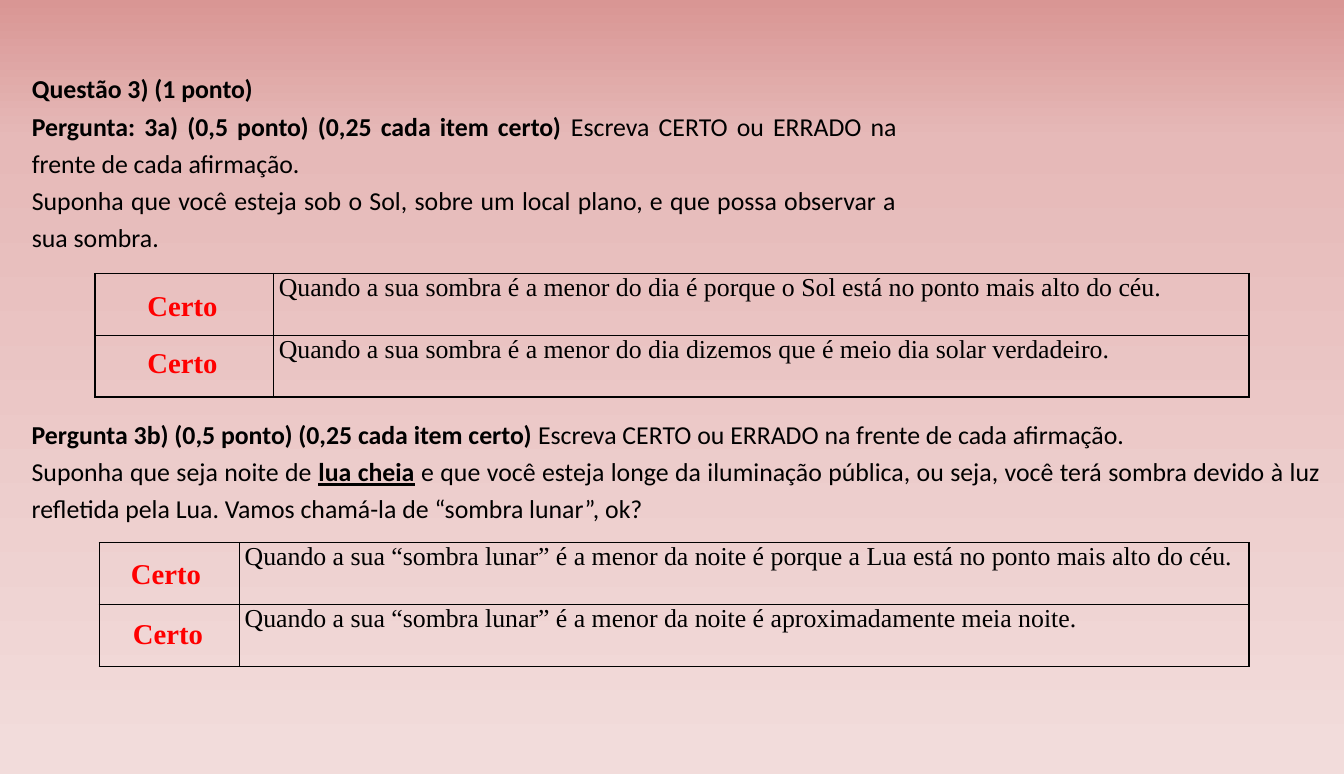
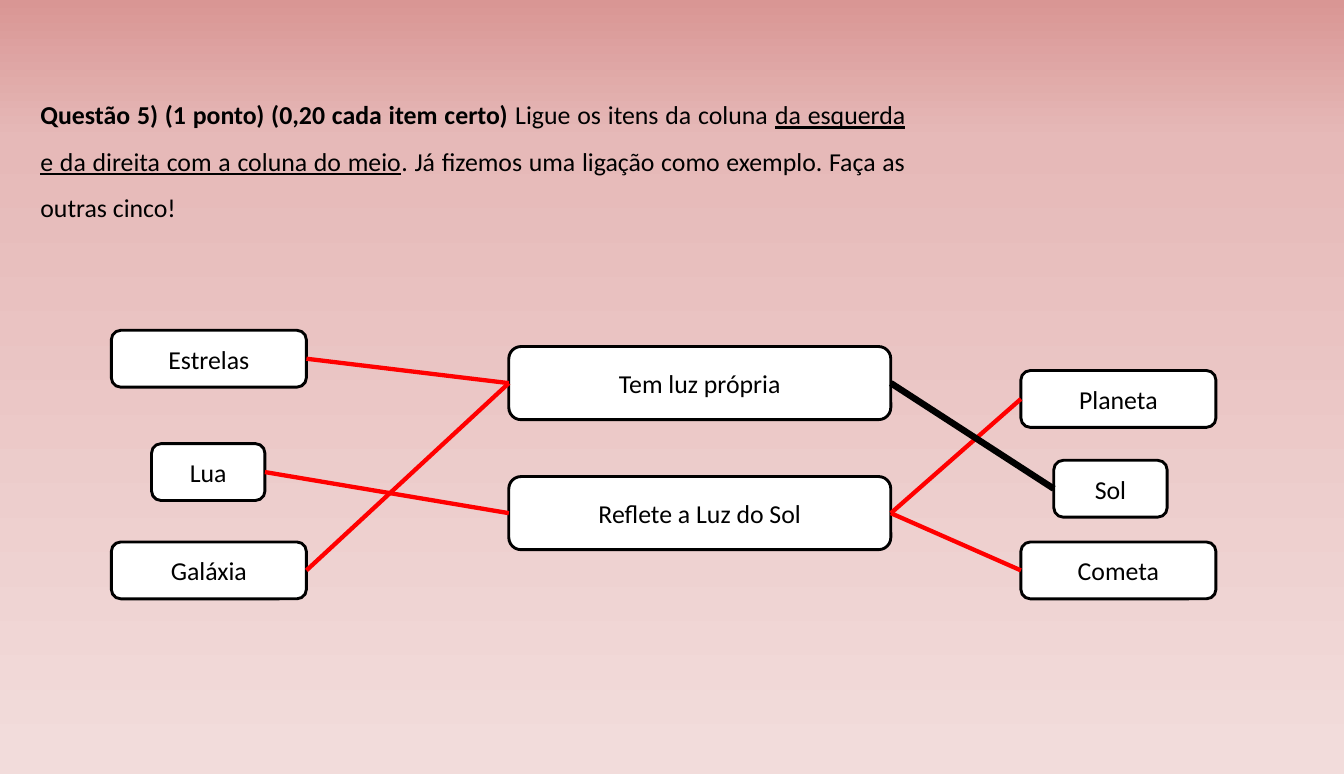
import copy

import pptx
import pptx.dml.color
import pptx.enum.shapes
import pptx.enum.text
import pptx.oxml
import pptx.oxml.ns
import pptx.util
from pptx.util import Cm

ALIGN = pptx.enum.text.PP_ALIGN
ANCHOR = pptx.enum.text.MSO_ANCHOR
LEFT_SITE, RIGHT_SITE = 1, 3


def color(value):
    return pptx.dml.color.RGBColor.from_string(value)


class Deck:
    BLACK, RED, WHITE = "000000", "FF0000", "FFFFFF"
    GRADIENT = [(0, "D99694"), (0.18, "E6B9B8"), (0.98, "F2DCDB")]
    BODY, SERIF = "Calibri", "Times New Roman"
    SIZE, ANSWER_SIZE = 18, 20

    def __init__(self):
        self.prs = pptx.Presentation()
        self.prs.slide_width, self.prs.slide_height = Cm(33.07), Cm(19.05)
        self.s = None
        self.paint_background()

    def paint_background(self):
        master = self.prs.slide_master
        fill = master.background.fill
        fill.gradient()
        fill.gradient_angle = 270
        stops = master.element.find(".//" + pptx.oxml.ns.qn("a:gsLst"))
        while len(stops) < len(self.GRADIENT):
            stops.append(copy.deepcopy(stops[-1]))
        for stop, (position, value) in zip(fill.gradient_stops, self.GRADIENT):
            stop.position = position
            stop.color.rgb = color(value)

    def new_slide(self):
        self.s = self.prs.slides.add_slide(self.prs.slide_layouts[5])

    def add_text(self, tf, paragraphs, align=ALIGN.JUSTIFY, spacing=None,
                 font=BODY, size=SIZE, ink=BLACK):
        """Each paragraph is a list of (text, style); style holds b and/or u."""
        for i, runs in enumerate(paragraphs):
            p = tf.paragraphs[0] if i == 0 else tf.add_paragraph()
            p.alignment = align
            if spacing:
                p.line_spacing = spacing
            for text, style in runs:
                r = p.add_run()
                r.text = text
                r.font.name, r.font.size = font, pptx.util.Pt(size)
                r.font.color.rgb = color(ink)
                r.font.bold, r.font.underline = "b" in style, "u" in style

    def fill_box(self, sp, paragraphs, wrap=True, **style):
        tf = sp.text_frame
        tf.word_wrap = wrap
        tf.auto_size = pptx.enum.text.MSO_AUTO_SIZE.SHAPE_TO_FIT_TEXT
        tf.vertical_anchor = ANCHOR.TOP
        self.add_text(tf, paragraphs, **style)

    def title(self, left, top, width, height, paragraphs, spacing):
        sp = self.s.shapes.title
        sp.left, sp.top, sp.width, sp.height = map(Cm, (left, top, width, height))
        self.fill_box(sp, paragraphs, spacing=spacing)

    def text(self, left, top, width, height, paragraphs, **style):
        sp = self.s.shapes.add_textbox(*map(Cm, (left, top, width, height)))
        self.fill_box(sp, paragraphs, **style)

    def answer(self, left, top):
        self.text(left, top, 2.26, 1.12, [[("Certo", "b")]], wrap=False,
                  font=self.SERIF, size=self.ANSWER_SIZE, ink=self.RED)

    def border(self, cell):
        tc_pr = cell._tc.get_or_add_tcPr()
        for side in "LRTB":
            tc_pr.append(pptx.oxml.parse_xml(
                f'<a:ln{side} {pptx.oxml.ns.nsdecls("a")} w="12700"><a:solidFill>'
                f'<a:srgbClr val="{self.BLACK}"/></a:solidFill></a:ln{side}>'))

    def statements(self, left, top, widths, sentences):
        """Table with a blank answer column beside the sentences."""
        row_height = 1.52
        frame = self.s.shapes.add_table(
            len(sentences), len(widths), Cm(left), Cm(top),
            Cm(sum(widths)), Cm(row_height * len(sentences)))
        table = frame.table
        table.first_row = table.horz_banding = False
        for column, width in zip(table.columns, widths):
            column.width = Cm(width)
        for row, sentence in zip(table.rows, sentences):
            row.height = Cm(row_height)
            for cell in row.cells:
                self.border(cell)
                cell.fill.background()
                cell.margin_left = cell.margin_right = Cm(0.13)
                cell.margin_top = cell.margin_bottom = 0
            self.add_text(row.cells[1].text_frame, [[(sentence, "")]],
                          font=self.SERIF)

    def box(self, label, left, top, width, height):
        sp = self.s.shapes.add_shape(
            pptx.enum.shapes.MSO_SHAPE.ROUNDED_RECTANGLE,
            *map(Cm, (left, top, width, height)))
        sp.shadow.inherit = False
        sp.fill.solid()
        sp.fill.fore_color.rgb = color(self.WHITE)
        sp.line.color.rgb = color(self.BLACK)
        sp.line.width = pptx.util.Pt(2)
        sp.text_frame.word_wrap = True
        sp.text_frame.vertical_anchor = ANCHOR.MIDDLE
        self.add_text(sp.text_frame, [[(label, "")]], align=ALIGN.CENTER)
        return sp

    def link(self, start, end, ink=RED, width=3):
        """Line from the right side of one box to the left side of another."""
        line = self.s.shapes.add_connector(
            pptx.enum.shapes.MSO_CONNECTOR.STRAIGHT, 0, 0, 0, 0)
        line.begin_connect(start, RIGHT_SITE)
        line.end_connect(end, LEFT_SITE)
        line.line.color.rgb = color(ink)
        line.line.width = pptx.util.Pt(width)
        line._element.spPr.append(pptx.oxml.parse_xml(
            f'<a:effectLst {pptx.oxml.ns.nsdecls("a")}/>'))


def shadow_question(deck):
    deck.new_slide()
    deck.title(0.53, 1.52, 21.79, 4.8, [
        [("Questão 3) (1 ponto) ", "b")],
        [("Pergunta: 3a) (0,5 ponto) (0,25 cada item certo) ", "b"),
         ("Escreva CERTO ou ERRADO na frente de cada afirmação.", "")],
        [("Suponha que você esteja sob o Sol, sobre um local plano, e que possa "
          "observar a sua sombra.", "")],
    ], spacing=1.2)
    deck.statements(2.34, 6.73, [4.39, 24], [
        "Quando a sua sombra é a menor do dia é porque o Sol está no ponto mais "
        "alto do céu.",
        "Quando a sua sombra é a menor do dia dizemos que é meio dia solar "
        "verdadeiro.",
    ])
    deck.text(0.53, 10.03, 32.21, 3.02, [
        [("Pergunta 3b) (0,5 ponto) (0,25 cada item certo) ", "b"),
         ("Escreva CERTO ou ERRADO na frente de cada afirmação.", "")],
        [("Suponha que seja noite de ", ""), ("lua cheia", "bu"),
         (" e que você esteja longe da iluminação pública, ou seja, você terá "
          "sombra devido à luz refletida pela Lua. Vamos chamá-la de “sombra "
          "lunar”, ok?", "")],
    ], spacing=1.2)
    deck.statements(2.44, 13.36, [3.45, 24.84], [
        "Quando a sua “sombra lunar” é a menor da noite é porque a Lua está no "
        "ponto mais alto do céu.",
        "Quando a sua “sombra lunar” é a menor da noite é aproximadamente meia "
        "noite.",
    ])
    for left, top in [(3.38, 6.96), (3.38, 8.36), (2.97, 13.56), (3.02, 15.04)]:
        deck.answer(left, top)


def light_question(deck):
    deck.new_slide()
    deck.title(0.74, 1.93, 21.79, 3.71, [
        [("Questão 5) (1 ponto) (0,20 cada item certo) ", "b"),
         ("Ligue os itens da coluna ", ""),
         ("da esquerda e da direita com a coluna do meio", "u"),
         (". Já fizemos uma ligação como exemplo. Faça as outras cinco!", "")],
    ], spacing=1.5)
    wide, narrow, middle = (4.8, 1.4), (2.79, 1.4), (9.4, 1.8)
    places = [
        ("Estrelas", 2.74, 8.13, wide),
        ("Lua", 3.73, 10.92, narrow),
        ("Galáxia", 2.74, 13.34, wide),
        ("Planeta", 25.12, 9.12, wide),
        ("Cometa", 25.12, 13.34, wide),
        ("Sol", 25.93, 11.33, narrow),
        ("Tem luz própria", 12.52, 8.53, middle),
        ("Reflete a Luz do Sol", 12.52, 11.73, middle),
    ]
    boxes = [deck.box(label, left, top, *size) for label, left, top, size in places]
    stars, moon, galaxy, planet, comet, sun, emits, reflects = boxes
    for start, end in [(stars, emits), (galaxy, emits), (moon, reflects),
                       (reflects, planet), (reflects, comet)]:
        deck.link(start, end)
    deck.link(emits, sun, ink=deck.BLACK, width=4.5)


def main():
    deck = Deck()
    shadow_question(deck)
    light_question(deck)
    deck.prs.save("out.pptx")


if __name__ == "__main__":
    main()
